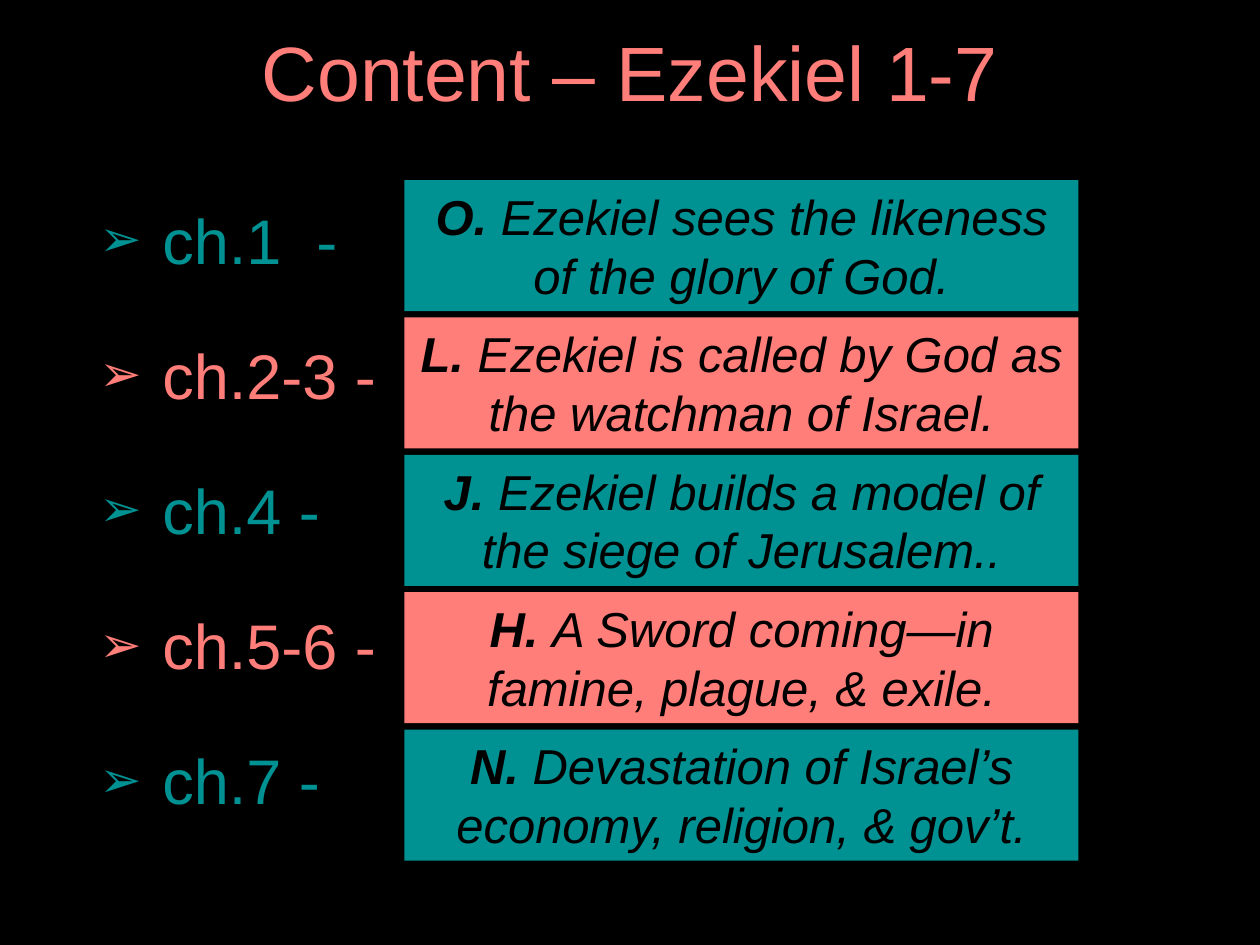
"""Build the Ezekiel 1-7 content slide."""
from lxml.etree import SubElement
from pptx import Presentation
from pptx.dml.color import RGBColor
from pptx.enum.shapes import MSO_SHAPE as Shape
from pptx.enum.text import MSO_ANCHOR as Anchor, MSO_AUTO_SIZE as AutoSize, PP_ALIGN as Align
from pptx.oxml.ns import qn
from pptx.util import Inches, Pt

BLACK = RGBColor(0x00, 0x00, 0x00)
TEAL = RGBColor(0x00, 0x91, 0x93)
CORAL = RGBColor(0xFF, 0x7E, 0x79)

TITLE = "Content – Ezekiel 1-7"
CHAPTERS = [
    ("ch.1  -", "O. ", "Ezekiel sees the likeness of the glory of God."),
    ("ch.2-3 -", "L. ", "Ezekiel is called by God as the watchman of Israel."),
    ("ch.4 -", "J. ", "Ezekiel builds a model of the siege of Jerusalem.."),
    ("ch.5-6 -", "H. ", "A Sword coming—in famine, plague, & exile."),
    ("ch.7 -", "N. ", "Devastation of Israel’s economy, religion, & gov’t."),
]
COLORS = [TEAL, CORAL]
LEFT, WIDTH = 0.69, 8.62
CARD_LEFT, CARD_TOP, CARD_WIDTH, CARD_HEIGHT, CARD_PITCH = 3.21, 1.43, 5.35, 1.04, 1.09


def set_font(paragraph, size, color):
    font = paragraph.font
    font.name, font.size = "Arial", Pt(size)
    font.color.rgb = color


def add_bullet(paragraph, indent):
    properties = paragraph._p.get_or_add_pPr()
    properties.set("marL", str(indent))
    properties.set("indent", str(-indent))
    SubElement(properties, qn("a:buSzPct"), val="80000")
    SubElement(properties, qn("a:buFont"), typeface="Arial")
    SubElement(properties, qn("a:buChar"), char="➢")


def add_text_frame(page, top, height):
    box = page.shapes.add_textbox(Inches(LEFT), Inches(top), Inches(WIDTH), Inches(height))
    box.text_frame.word_wrap = True
    return box.text_frame


def add_title(page):
    frame = add_text_frame(page, 0.16, 0.9)
    frame.vertical_anchor = Anchor.MIDDLE
    para = frame.paragraphs[0]
    para.text = TITLE
    para.alignment, para.line_spacing = Align.CENTER, 0.9
    set_font(para, 44, CORAL)


def add_chapter_list(page):
    frame = add_text_frame(page, 1.49, 5.27)
    frame.margin_top = Inches(0.11)
    for index, (chapter, _, _) in enumerate(CHAPTERS):
        para = frame.add_paragraph() if index else frame.paragraphs[0]
        para.text = chapter
        add_bullet(para, Inches(0.5))
        para.space_before, para.space_after = Pt(4 if index else 0), Pt(30)
        set_font(para, 36, COLORS[index % 2])


def add_card(page, index, letter, summary):
    card = page.shapes.add_shape(
        Shape.RECTANGLE, Inches(CARD_LEFT), Inches(CARD_TOP + index * CARD_PITCH),
        Inches(CARD_WIDTH), Inches(CARD_HEIGHT))
    card.shadow.inherit = False
    card.fill.solid()
    card.fill.fore_color.rgb = COLORS[index % 2]
    card.line.fill.background()
    frame = card.text_frame
    frame.word_wrap, frame.auto_size = True, AutoSize.SHAPE_TO_FIT_TEXT
    frame.vertical_anchor = Anchor.TOP
    para = frame.paragraphs[0]
    para.alignment = Align.CENTER
    set_font(para, 28, BLACK)
    para.font.italic = True
    for text, bold in ((letter, True), (summary, False)):
        span = para.add_run()
        span.text, span.font.bold = text, bold


def main():
    deck = Presentation()
    deck.slide_width, deck.slide_height = Inches(10), Inches(7.5)
    page = deck.slides.add_slide(deck.slide_layouts[6])
    page.background.fill.solid()
    page.background.fill.fore_color.rgb = BLACK
    add_title(page)
    add_chapter_list(page)
    for index, (_, letter, summary) in enumerate(CHAPTERS):
        add_card(page, index, letter, summary)
    deck.save("out.pptx")


if __name__ == "__main__":
    main()
